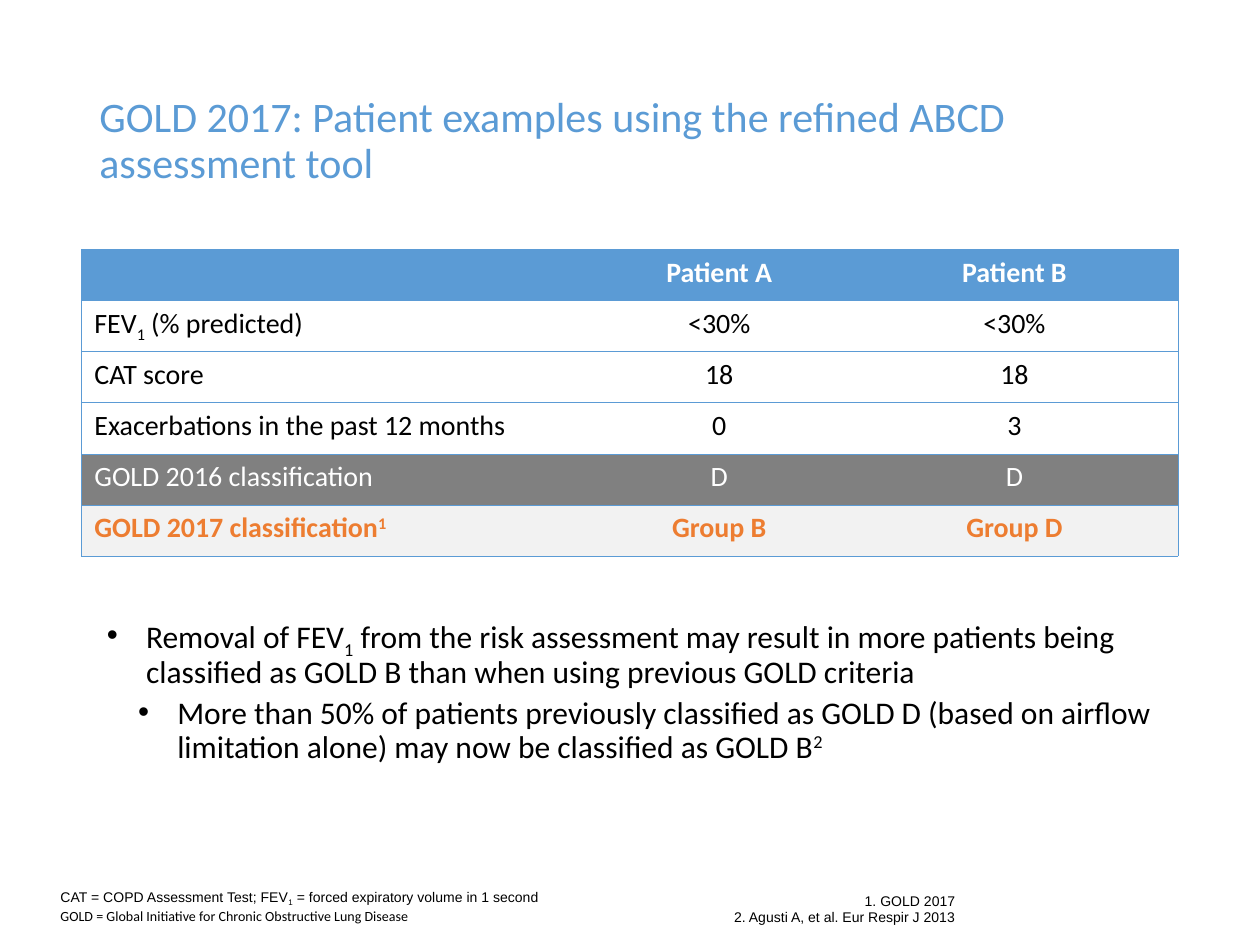
from lxml import etree
from pptx import Presentation
from pptx.dml.color import RGBColor
from pptx.enum import text
from pptx.oxml import ns
from pptx.util import Cm, Pt

BLUE = RGBColor(0x5B, 0x9B, 0xD5)
ORANGE = RGBColor(0xED, 0x7D, 0x31)
GREY = RGBColor(0x80, 0x80, 0x80)
PALE = RGBColor(0xF2, 0xF2, 0xF2)
WHITE = RGBColor(0xFF, 0xFF, 0xFF)
BLACK = RGBColor(0, 0, 0)

# In all wording, "|" separates runs; "_" starts a subscript, "^" a superscript.
BASELINES = {"_": "-25000", "^": "30000"}
TITLE = "GOLD 2017: Patient examples using the refined ABCD assessment tool"
PLAIN = (WHITE, BLACK, False)
ROWS = [  # cell texts, (fill, font colour, bold)
    (("", "Patient A", "Patient B"), (BLUE, WHITE, True)),
    (("FEV|_1| (% predicted)", "<30%", "<30%"), PLAIN),
    (("CAT score", "18", "18"), PLAIN),
    (("Exacerbations in the past 12 months", "0", "3"), PLAIN),
    (("GOLD 2016 classification", "D", "D"), (GREY, WHITE, False)),
    (("GOLD 2017 classification|^1", "Group B", "Group D"), (PALE, ORANGE, True)),
]
COLUMN_WIDTHS = (10.2, 5.3, 6.6)
ROW_HEIGHT = 1.03
BULLETS = [  # text, level, left indent in cm, space before in points
    ("Removal of FEV|_1| from the risk assessment may result in more patients "
     "being classified as GOLD B than when using previous GOLD criteria", 0, 0.79, 6),
    ("More than 50% of patients previously classified as GOLD D (based on airflow "
     "limitation alone) may now be classified as GOLD B|^2", 1, 1.42, 3.8),
]
HANGING = 0.79
FOOTNOTES = [  # left, top, width, alignment, (line, font) pairs
    (0.97, 17.78, 16.18, text.PP_ALIGN.LEFT, [
        ("CAT = COPD Assessment Test; FEV|_1| = forced expiratory volume in 1 second", "Arial"),
        ("GOLD = Global Initiative for Chronic Obstructive Lung Disease", "Calibri")]),
    (14.05, 17.86, 5.46, text.PP_ALIGN.RIGHT, [
        ("1. GOLD 2017", "Arial"),
        ("2. Agusti A, et al. Eur Respir J 2013", "Arial")]),
]


def write(p, content, size, color=BLACK, font="Calibri", bold=False, align=text.PP_ALIGN.LEFT):
    p.alignment = align
    for piece in content.split("|"):
        baseline = BASELINES.get(piece[:1])
        r = p.add_run()
        r.text = piece[1:] if baseline else piece
        r.font.name, r.font.size, r.font.bold = font, Pt(size), bold
        r.font.color.rgb = color
        if baseline:
            r.font._element.set("baseline", baseline)


def place(sp, left, top, width, height):
    sp.left, sp.top, sp.width, sp.height = map(Cm, (left, top, width, height))


def set_bullet(p, left):
    pPr = p._p.get_or_add_pPr()
    pPr.set("marL", str(Cm(left)))
    pPr.set("indent", str(-Cm(HANGING)))
    etree.SubElement(pPr, ns.qn("a:buFont"), typeface="Arial")
    etree.SubElement(pPr, ns.qn("a:buChar"), char="•")


def set_borders(cell, visible):
    """Draw thin blue lines on the visible sides (of L, R, T, B) and none on the others."""
    tcPr = cell._tc.get_or_add_tcPr()
    for i, side in enumerate("LRTB"):
        ln = etree.Element(ns.qn(f"a:ln{side}"), w=str(Pt(0.5)))
        if side in visible:
            fill = etree.SubElement(ln, ns.qn("a:solidFill"))
            etree.SubElement(fill, ns.qn("a:srgbClr"), val=str(BLUE))
        else:
            etree.SubElement(ln, ns.qn("a:noFill"))
        tcPr.insert(i, ln)


def add_patient_table(s):
    frame = s.shapes.add_table(len(ROWS), len(COLUMN_WIDTHS), Cm(1.65), Cm(5.03),
                               Cm(sum(COLUMN_WIDTHS)), Cm(ROW_HEIGHT * len(ROWS)))
    table = frame.table
    table.horz_banding = False
    for column, width in zip(table.columns, COLUMN_WIDTHS):
        column.width = Cm(width)
    last = len(COLUMN_WIDTHS) - 1
    for i, (cells, (fill, color, bold)) in enumerate(ROWS):
        table.rows[i].height = Cm(ROW_HEIGHT)
        for j, content in enumerate(cells):
            cell = table.cell(i, j)
            cell.fill.solid()
            cell.fill.fore_color.rgb = fill
            set_borders(cell, "TB" + "L" * (j == 0) + "R" * (j == last))
            align = text.PP_ALIGN.CENTER if j else text.PP_ALIGN.LEFT
            write(cell.text_frame.paragraphs[0], content, 16, color, bold=bold, align=align)


def main():
    prs = Presentation()
    prs.slide_width, prs.slide_height = Cm(25.4), Cm(19.05)
    s = prs.slides.add_slide(prs.slide_layouts[1])
    title, body = s.placeholders

    place(title, 1.75, 1.02, 21.9, 3.68)
    tf = title.text_frame
    tf.auto_size = text.MSO_AUTO_SIZE.NONE
    tf.vertical_anchor = text.MSO_ANCHOR.MIDDLE
    tf.paragraphs[0].line_spacing = 0.9
    write(tf.paragraphs[0], TITLE, 24, BLUE)

    place(body, 1.9, 12.32, 21.6, 4.45)
    tf = body.text_frame
    tf.auto_size = text.MSO_AUTO_SIZE.NONE
    for i, (content, level, left, before) in enumerate(BULLETS):
        p = tf.add_paragraph() if i else tf.paragraphs[0]
        p.level, p.line_spacing, p.space_before = level, 0.9, Pt(before)
        set_bullet(p, left)
        write(p, content, 18)

    add_patient_table(s)

    for left, top, width, align, lines in FOOTNOTES:
        tf = s.shapes.add_textbox(Cm(left), Cm(top), Cm(width), Cm(0.94)).text_frame
        tf.word_wrap = True
        p = tf.paragraphs[0]
        for i, (line, font) in enumerate(lines):
            if i:
                p.add_line_break()
            write(p, line, 8, font=font, align=align)

    prs.save("out.pptx")


if __name__ == "__main__":
    main()
